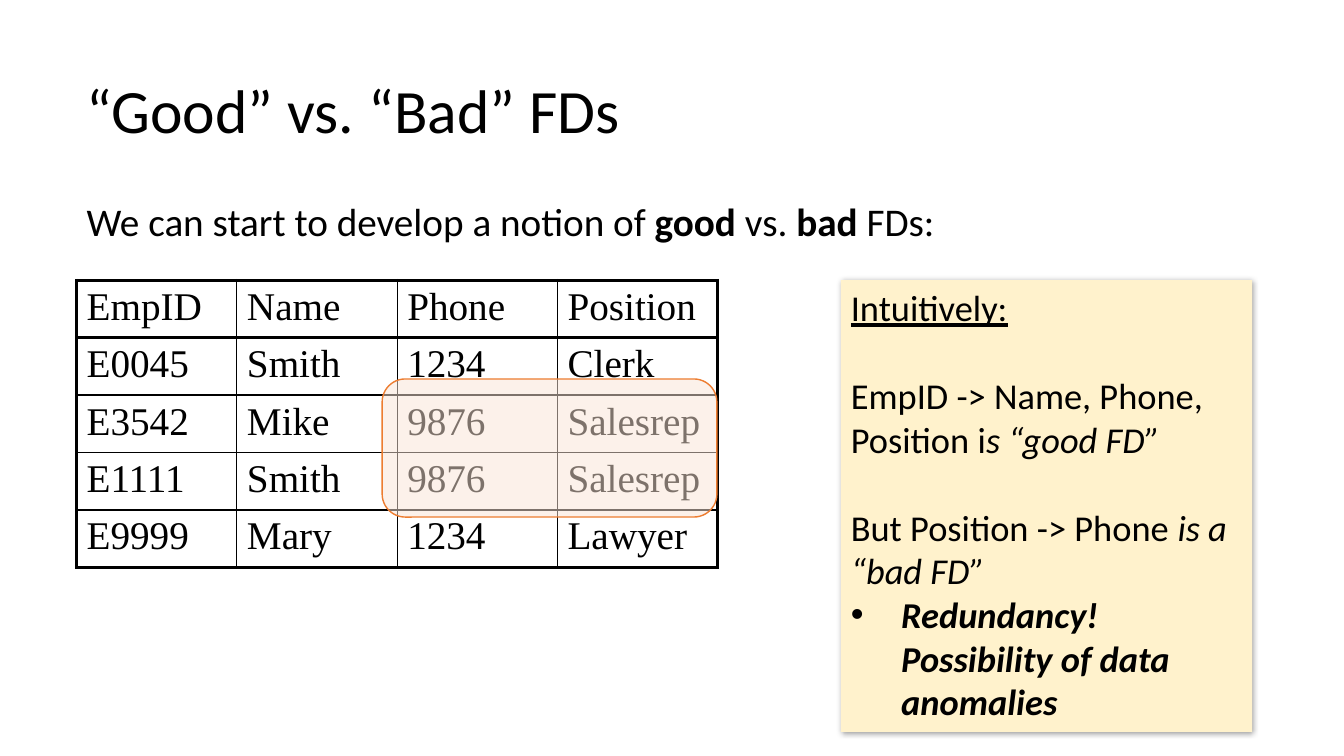
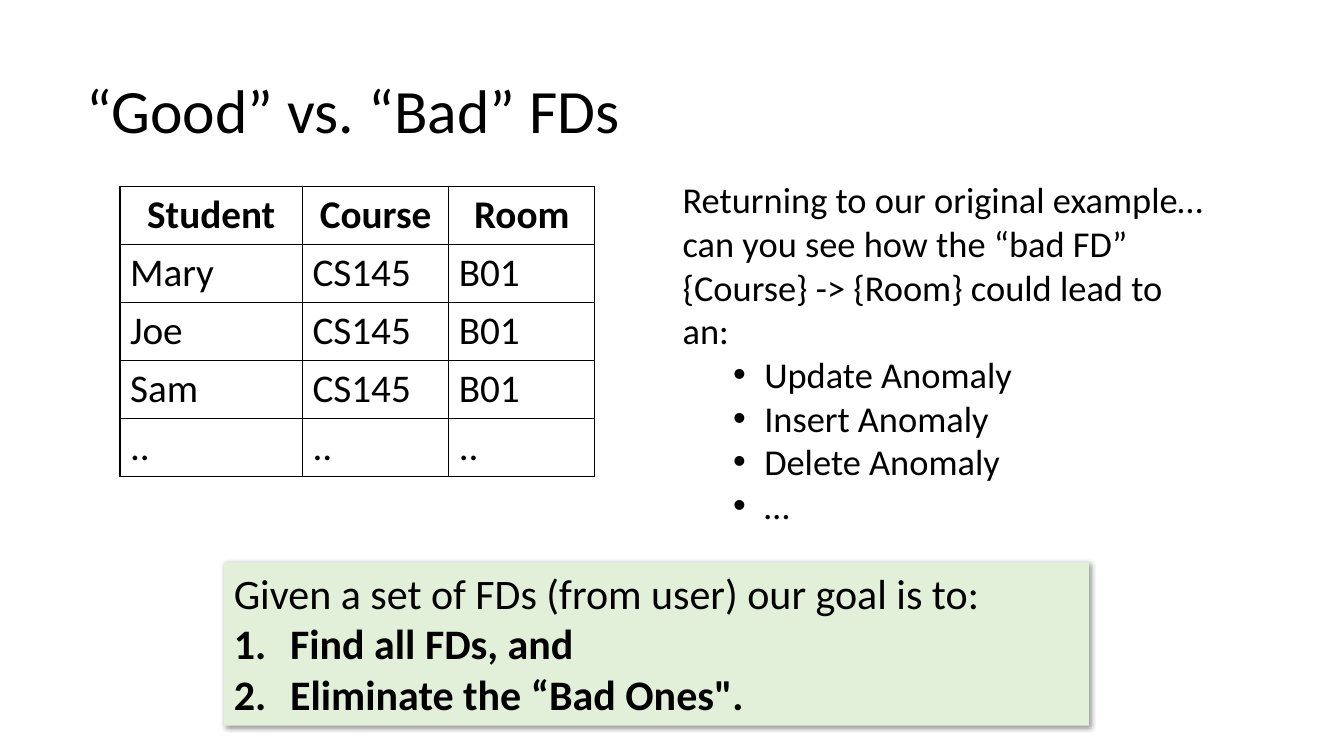
from pptx import Presentation
from pptx.dml.color import RGBColor as Rgb
from pptx.enum.shapes import MSO_SHAPE as Kind
from pptx.enum.text import MSO_ANCHOR as Anchor, MSO_AUTO_SIZE as Auto, PP_ALIGN as Align
from pptx.oxml.ns import qn
from pptx.util import Inches, Pt
from lxml.etree import SubElement as Sub

HUE = {"ink": "000000", "cream": "FFF2CC", "mint": "E2F0D9",
       "peach": "FBE5D6", "rust": "ED7D31"}
SANS, SERIF = "Calibri", "Times New Roman"
TITLE = "“Good” vs. “Bad” FDs"
TITLE_BOX = (0.76, 0.4, 11.65, 1.45)
THIN, THICK = 1, 2.25

STAFF = [
    ["EmpID", "Name", "Phone", "Position"],
    ["E0045", "Smith", "1234", "Clerk"],
    ["E3542", "Mike", "9876", "Salesrep"],
    ["E1111", "Smith", "9876", "Salesrep"],
    ["E9999", "Mary", "1234", "Lawyer"],
]
ROOMS = [["Student", "Course", "Room"]]
ROOMS += [[name, "CS145", "B01"] for name in ("Mary", "Joe", "Sam")]
ROOMS += [[".."] * 3]


def tint(name):
    """Return the named colour."""
    return Rgb.from_string(HUE[name])


def place(shape, box):
    """Move a shape to a box given in inches."""
    shape.left, shape.top, shape.width, shape.height = map(Inches, box)


def write(par, runs, size, font=SANS):
    """Add runs to a paragraph, each a text and its marks out of b, i and u."""
    for text, marks in runs:
        run = par.add_run()
        run.text = text
        face = run.font
        face.name, face.size = font, Pt(size)
        face.color.rgb = tint("ink")
        face.bold, face.italic = "b" in marks, "i" in marks
        face.underline = "u" in marks


def mark(par, sign=None, left=0, hang=0):
    """Set the indent of a paragraph and its bullet, number or neither."""
    props = par._p.get_or_add_pPr()
    props.set("marL", str(Inches(left)))
    props.set("indent", str(-Inches(hang)))
    if sign is None:
        Sub(props, qn("a:buNone"))
    elif sign == "1.":
        Sub(props, qn("a:buFont"), typeface="+mj-lt")
        Sub(props, qn("a:buAutoNum"), type="arabicPeriod")
    else:
        Sub(props, qn("a:buFont"), typeface="Arial")
        Sub(props, qn("a:buChar"), char=sign)


def fill_text(frame, size, pars):
    """Fill a frame with paragraphs of runs, gap before and bullet."""
    frame.word_wrap, frame.auto_size = True, Auto.NONE
    frame.vertical_anchor = Anchor.TOP
    for n, (runs, gap, *sign) in enumerate(pars):
        par = frame.add_paragraph() if n else frame.paragraphs[0]
        par.alignment = Align.LEFT
        par.space_before, par.space_after = Pt(gap), Pt(0)
        mark(par, *sign)
        write(par, runs, size)


def start(deck, layout):
    """Add a slide with the shared title."""
    slide = deck.slides.add_slide(deck.slide_layouts[layout])
    head = slide.shapes.title
    place(head, TITLE_BOX)
    frame = head.text_frame
    frame.auto_size, frame.vertical_anchor = Auto.NONE, Anchor.MIDDLE
    par = frame.paragraphs[0]
    par.alignment, par.line_spacing = Align.LEFT, 0.9
    write(par, [(TITLE, "")], 44)
    return slide


def add_block(slide, kind, box, hue):
    """Add a filled shape with neither line nor shadow."""
    shape = slide.shapes.add_shape(kind, *map(Inches, box))
    shape.shadow.inherit = False
    shape.fill.solid()
    shape.fill.fore_color.rgb = tint(hue)
    shape.line.fill.background()
    return shape


def add_card(slide, box, hue, size, pars):
    """Add a text card with a soft shadow."""
    card = add_block(slide, Kind.RECTANGLE, box, hue)
    glow = Sub(card._element.spPr.find(qn("a:effectLst")), qn("a:outerShdw"),
               blurRad=str(Pt(4)), dist=str(Pt(1)), dir=str(45 * 60000))
    shade = Sub(glow, qn("a:srgbClr"), val=HUE["ink"])
    Sub(shade, qn("a:alpha"), val="40000")
    fill_text(card.text_frame, size, pars)


def add_focus(slide, box):
    """Add a half clear rounded frame."""
    focus = add_block(slide, Kind.ROUNDED_RECTANGLE, box, "peach")
    hue = focus._element.spPr.find(qn("a:solidFill"))[0]
    Sub(hue, qn("a:alpha"), val="50000")
    focus.line.color.rgb = tint("rust")
    focus.line.width = Pt(1)


def add_edge(cell, side, width):
    """Draw one border of a cell."""
    line = Sub(cell._tc.get_or_add_tcPr(), qn("a:ln" + side), w=str(Pt(width)))
    Sub(Sub(line, qn("a:solidFill")), qn("a:srgbClr"), val=HUE["ink"])


def add_grid(slide, box, rows, cols, font, rim=THIN, head=None):
    """Add a ruled table whose rim and header rule share one width."""
    high, wide = len(rows), len(cols)
    grid = slide.shapes.add_table(high, wide, *map(Inches, box)).table
    grid.first_row = grid.horz_banding = False
    for col, width in zip(grid.columns, cols):
        col.width = Inches(width)
    for r, row in enumerate(rows):
        grid.rows[r].height = Inches(box[3] / high)
        for c, text in enumerate(row):
            cell = grid.cell(r, c)
            edges = {"L": c == 0, "R": c == wide - 1,
                     "T": r < 2, "B": r in (0, high - 1)}
            for side, bold in edges.items():
                add_edge(cell, side, rim if bold else THIN)
            cell.fill.background()
            par = cell.text_frame.paragraphs[0]
            first = head and r == 0
            par.alignment = Align.CENTER if first else Align.LEFT
            write(par, [(text, head if first else "")], 28, font)


def make_staff(deck):
    """Build the slide that tells good from bad dependencies."""
    slide = start(deck, 5)
    intro = slide.shapes.add_textbox(*map(Inches, (0.76, 1.91, 8.71, 0.57)))
    fill_text(intro.text_frame, 28, [
        ([("We can start to develop a notion of ", ""), ("good ", "b"),
          ("vs. ", ""), ("bad", "b"), (" FDs:", "")], 0)])
    left, top = 0.76, 2.78
    add_grid(slide, (left, top, 6.36, 2.85), STAFF, [1.59] * 4, SERIF, THICK)
    add_card(slide, (8.34, top, 4.08, 4.48), "cream", 26, [
        ([("Intuitively:", "u")], 0),
        ([("EmpID -> Name, Phone, Position i", ""), ("s “good FD”", "i")], 31.7),
        ([("But Position -> Phone ", ""), ("is a “bad FD”", "i")], 31.7),
        ([("Redundancy! Possibility of data anomalies", "bi")], 0, "•", 0.5, 0.5)])
    add_focus(slide, (left + 3.03, top + 0.98, 3.32, 1.37))


def make_rooms(deck):
    """Build the slide on anomalies and the goal."""
    slide = start(deck, 1)
    add_grid(slide, (1.19, 1.85, 4.71, 2.87), ROOMS, [1.81, 1.45, 1.45],
             SANS, head="b")
    add_card(slide, (2.22, 5.58, 8.58, 1.62), "mint", 30, [
        ([("Given a set of FDs (from user) our goal is to:", "")], 0),
        ([("Find all FDs, and", "b")], 0, "1.", 0.56, 0.56),
        ([("Eliminate the “Bad Ones\".", "b")], 0, "1.", 0.56, 0.56)])
    body = slide.placeholders[1]
    place(body, (6.67, 1.71, 5.42, 3.6))
    lead = ("Returning to our original example… can you see how the “bad FD” "
            "{Course} -> {Room} could lead to an:")
    kinds = ["Update Anomaly", "Insert Anomaly", "Delete Anomaly", "…"]
    fill_text(body.text_frame, 26, [([(lead, "")], 0)] + [
        ([(kind, "")], 0, "•", 0.81, 0.31) for kind in kinds])


def main():
    """Build and save the deck."""
    deck = Presentation()
    deck.slide_width, deck.slide_height = Inches(13.33), Inches(7.5)
    make_staff(deck)
    make_rooms(deck)
    deck.save("out.pptx")


if __name__ == "__main__":
    main()
